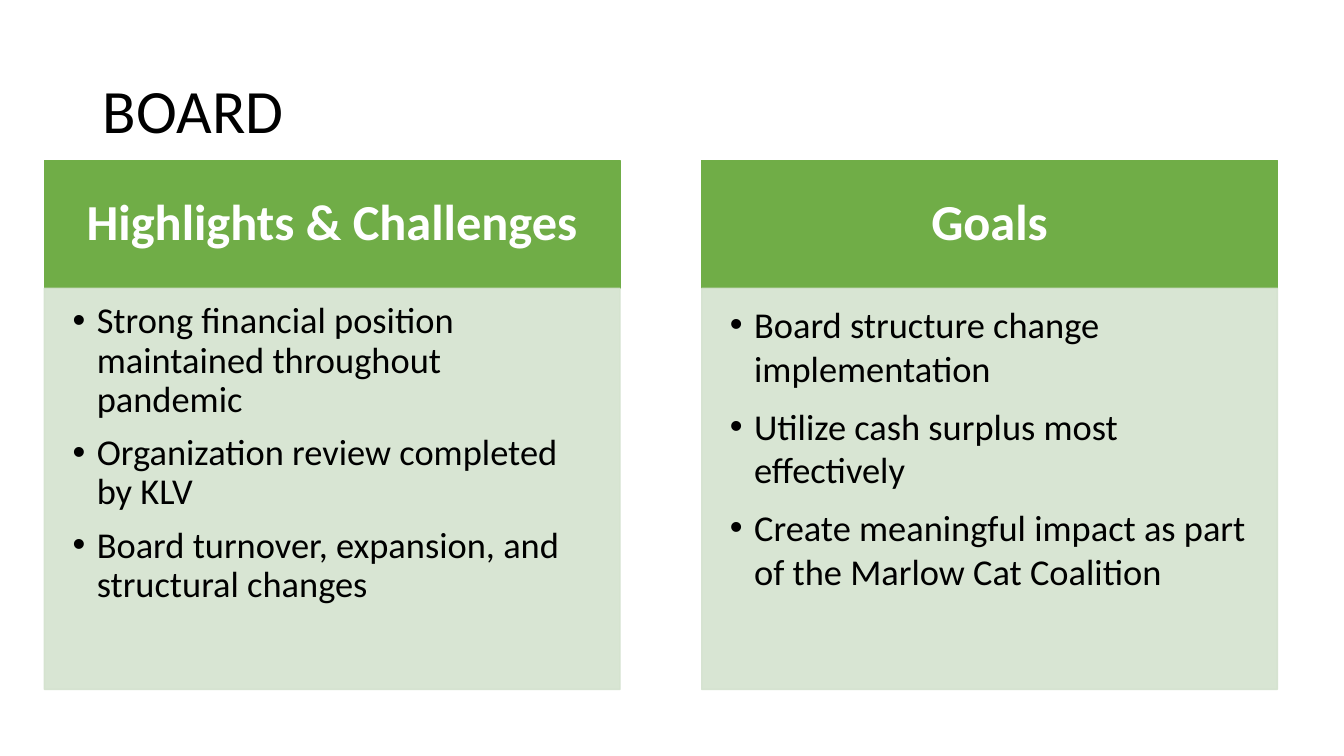
from pptx import Presentation
from pptx.dml.color import RGBColor
from pptx.enum.text import MSO_ANCHOR, MSO_AUTO_SIZE, PP_ALIGN
from pptx.oxml.ns import qn
from pptx.util import Inches, Pt
from lxml import etree

GREEN = RGBColor(0x70, 0xAD, 0x47)
PALE = RGBColor(0xD4, 0xE2, 0xCE)
BLACK = RGBColor(0, 0, 0)
WHITE = RGBColor(0xFF, 0xFF, 0xFF)
TOP, MIDDLE = MSO_ANCHOR.TOP, MSO_ANCHOR.MIDDLE
LEFT, CENTER = PP_ALIGN.LEFT, PP_ALIGN.CENTER
NO_FIT = MSO_AUTO_SIZE.NONE
COMPARE = 4  # layout with a title, two headings and two lists

HEAD_H, BODY_H, STEP = 1.27, 3.98, 6.52
COLUMNS = [
    ("Highlights & Challenges", 0.9, [
        "Strong financial position maintained throughout pandemic",
        "Organization review completed by KLV",
        "Board turnover, expansion, and structural changes",
    ]),
    ("Goals", 1.0, [
        "Board structure change implementation",
        "Utilize cash surplus most effectively",
        "Create meaningful impact as part of the Marlow Cat Coalition",
    ]),
]


def place(shape, box, insets, anchor):
    shape.left, shape.top, shape.width, shape.height = map(Inches, box)
    frame = shape.text_frame
    frame.word_wrap = True
    frame.auto_size = NO_FIT
    frame.vertical_anchor = anchor
    (frame.margin_left, frame.margin_top,
     frame.margin_right, frame.margin_bottom) = map(Inches, insets)


def write(shape, lines, size, color, align, spacing, before=0, bold=False):
    frame = shape.text_frame
    frame.text = "\n".join(lines)
    for para in frame.paragraphs:
        para.alignment = align
        para.line_spacing = spacing
        para.space_before = Pt(before)
        para.space_after = Pt(0)
        font = para.font
        font.name, font.size, font.bold = "Calibri", Pt(size), bold
        font.color.rgb = color


def paint(shape, color, alpha=100):
    shape.fill.solid()
    shape.fill.fore_color.rgb = color
    shape.line.color.rgb = color
    shape.line.width = Pt(1)
    if alpha < 100:
        for tone in shape.fill._xPr.iter(qn("a:srgbClr")):
            etree.SubElement(tone, qn("a:alpha"), val=str(alpha * 1000))


def bullet(para):
    props = para._p.get_or_add_pPr()
    props.set("marL", str(Inches(0.31)))
    props.set("indent", str(Inches(-0.24)))
    marks = [("a:buFont", {"typeface": "Arial"}), ("a:buChar", {"char": "•"})]
    spot = props.find(qn("a:defRPr"))
    for tag, attrs in marks:
        mark = etree.Element(qn(tag), attrs)
        if spot is None:
            props.append(mark)
        else:
            spot.addprevious(mark)


def add_title(slide, text, box):
    title = slide.shapes.title
    place(title, box, (0.1, 0.05, 0.1, 0.05), MIDDLE)
    write(title, [text], 44, BLACK, LEFT, 0.9)


def add_column(head, body, box, column):
    left, top, width = box
    label, spacing, points = column
    # Heading band
    place(head, (left, top, width, HEAD_H), (0.28, 0.16, 0.28, 0.16), MIDDLE)
    paint(head, GREEN)
    write(head, [label], 36, WHITE, CENTER, 0.9, bold=True)
    # Bulleted panel
    place(body, (left, top + HEAD_H, width, BODY_H),
          (0.21, 0.14, 0.28, 0.25), TOP)
    paint(body, PALE, 89)
    write(body, points, 26, BLACK, LEFT, spacing, before=10)
    for para in body.text_frame.paragraphs:
        bullet(para)


def main():
    deck = Presentation()
    deck.slide_width, deck.slide_height = Inches(13.33), Inches(7.5)
    slide = deck.slides.add_slide(deck.slide_layouts[COMPARE])
    add_title(slide, "BOARD", (0.92, 0.4, 11.5, 1.45))
    holders = slide.placeholders
    for i, column in enumerate(COLUMNS):
        add_column(holders[2 * i + 1], holders[2 * i + 2],
                   (0.44 + i * STEP, 1.59, 5.71), column)
    deck.save("out.pptx")


if __name__ == "__main__":
    main()
